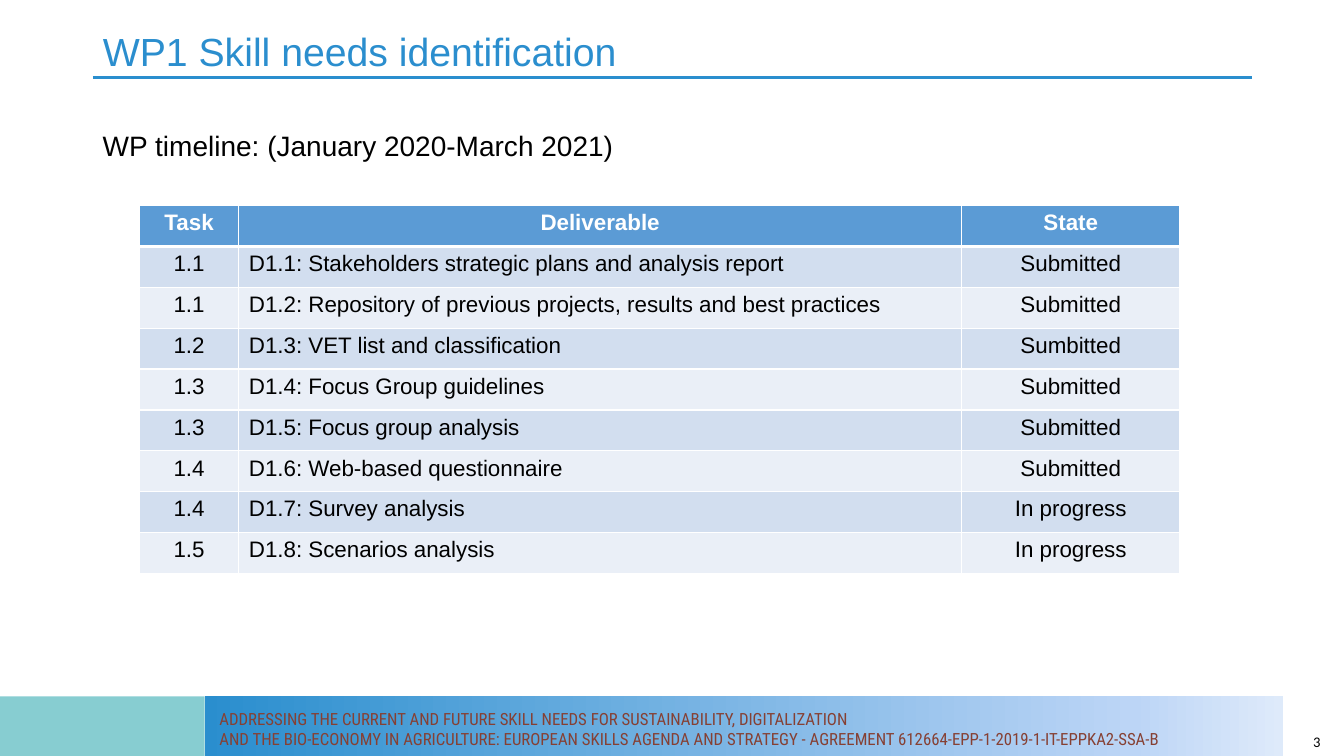
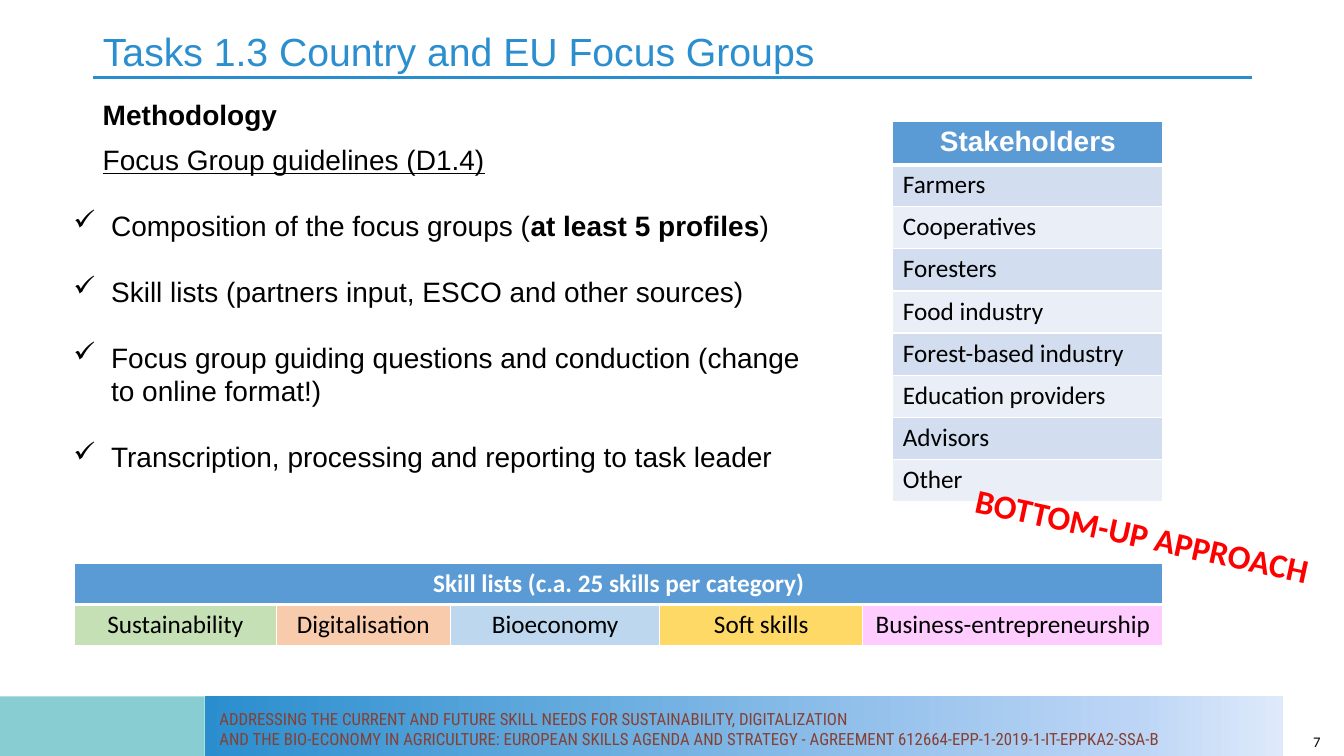
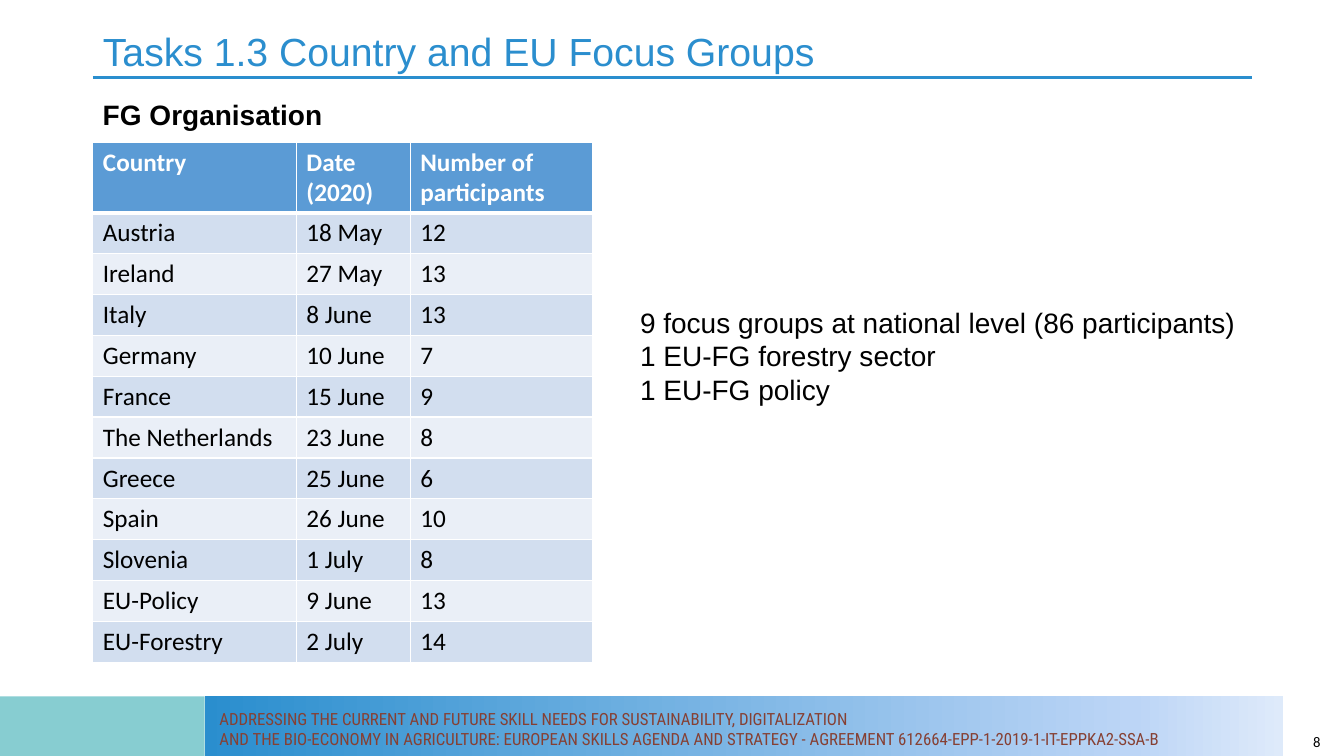
from copy import deepcopy

from lxml import etree
from pptx import Presentation
from pptx.dml.color import RGBColor
from pptx.enum.shapes import MSO_CONNECTOR, MSO_SHAPE
from pptx.enum.text import MSO_ANCHOR, MSO_AUTO_SIZE, PP_ALIGN
from pptx.oxml.ns import qn
from pptx.util import Cm, Pt

LEFT, CENTER, RIGHT, JUSTIFY = PP_ALIGN.LEFT, PP_ALIGN.CENTER, PP_ALIGN.RIGHT, PP_ALIGN.JUSTIFY
TOP, MIDDLE = MSO_ANCHOR.TOP, MSO_ANCHOR.MIDDLE
RECT, STRAIGHT = MSO_SHAPE.RECTANGLE, MSO_CONNECTOR.STRAIGHT
NO_FIT = MSO_AUTO_SIZE.NONE

BLACK, WHITE, RED = "000000", "FFFFFF", "FF0000"
TITLE_BLUE, RULE_BLUE, TEAL, BROWN = "2B8ECE", "2A8ECE", "87CDD1", "864033"
HEADER, BANDS = "5B9BD5", ("D2DEEF", "EAEFF7")
BAND_STOPS = ((0, RULE_BLUE), (0.86, "BCD5F6"), (1, "DEEAFA"))

FOOTER = (
    "ADDRESSING THE CURRENT AND FUTURE SKILL NEEDS FOR SUSTAINABILITY, DIGITALIZATION",
    "AND THE BIO-ECONOMY IN AGRICULTURE: EUROPEAN SKILLS AGENDA AND STRATEGY - "
    "AGREEMENT 612664-EPP-1-2019-1-IT-EPPKA2-SSA-B",
)
MARGIN = 2.34
CONTENT_W = 29.21


def rgb(color):
    return RGBColor.from_string(color)


def add_bullet(p, char, indent):
    pPr = p._p.get_or_add_pPr()
    pPr.set("marL", str(Cm(indent)))
    pPr.set("indent", str(-Cm(indent)))
    etree.SubElement(pPr, qn("a:buChar")).set("char", char)


def write(tf, paragraphs, font="Arial", size=20, color=BLACK, bold=False, align=LEFT,
          spacing=None, gap=0, bullet=None, indent=0.95):
    """Fill a text frame. A paragraph is a string or a list of (text, font attributes)."""
    for i, runs in enumerate(paragraphs):
        p = tf.add_paragraph() if i else tf.paragraphs[0]
        p.alignment = align
        if spacing:
            p.line_spacing = spacing
        if i and gap:
            p.space_before = Pt(gap)
        if bullet:
            add_bullet(p, bullet, indent)
        for text, extra in [(runs, {})] if isinstance(runs, str) else runs:
            r = p.add_run()
            r.text = text
            r.font.name, r.font.size, r.font.bold = font, Pt(size), bold
            r.font.color.rgb = rgb(color)
            for name, value in extra.items():
                setattr(r.font, name, value)


def set_borders(cell, **widths):
    """Draw white cell borders; widths in points by side L, R, T, B."""
    tcPr = cell._tc.get_or_add_tcPr()
    for side in "LRTB":
        ln = etree.SubElement(tcPr, qn(f"a:ln{side}"), w=str(Pt(widths.get(side, 1))))
        fill = etree.SubElement(ln, qn("a:solidFill"))
        etree.SubElement(fill, qn("a:srgbClr"), val=WHITE)


class Deck:
    def __init__(self):
        self.prs = Presentation()
        self.prs.slide_width, self.prs.slide_height = Cm(33.87), Cm(19.05)
        self.s = None

    def new_slide(self, title, number):
        self.s = self.prs.slides.add_slide(self.prs.slide_layouts[5])
        self.rule()
        self.band(0, 5.16, TEAL)
        self.band(5.16, 27.18)
        self.text(5.28, 17.73, 27.05, 1.27, FOOTER, font="Roboto Condensed", size=12, color=BROWN)
        self.text(25.91, 18.36, 7.62, 0.64, [str(number)], anchor=MIDDLE,
                  font="Calibri", size=10.5, align=RIGHT)
        self.title(title)

    def title(self, text):
        sp = self.s.shapes.title
        sp.left, sp.top, sp.width, sp.height = Cm(MARGIN), Cm(0.69), Cm(CONTENT_W), Cm(1.5)
        tf = sp.text_frame
        tf.auto_size, tf.vertical_anchor = NO_FIT, TOP
        write(tf, [text], size=28, color=TITLE_BLUE, spacing=0.9)

    def rule(self):
        line = self.s.shapes.add_connector(
            STRAIGHT, Cm(MARGIN), Cm(1.96), Cm(MARGIN + CONTENT_W), Cm(1.96))
        line.line.color.rgb = rgb(RULE_BLUE)
        line.line.width = Pt(2.25)
        etree.SubElement(line._element.spPr, qn("a:effectLst"))

    def band(self, x, w, color=None):
        """Footer band, in one colour or else in the shared gradient."""
        sp = self.s.shapes.add_shape(RECT, Cm(x), Cm(17.55), Cm(w), Cm(1.5))
        sp.shadow.inherit = False
        sp.line.fill.background()
        if color:
            sp.fill.solid()
            sp.fill.fore_color.rgb = rgb(color)
            return
        sp.fill.gradient()
        sp.fill.gradient_angle = 0
        stops = sp._element.spPr.find(qn("a:gradFill")).find(qn("a:gsLst"))
        stops.append(deepcopy(stops[0]))
        for stop, (position, stop_color) in zip(sp.fill.gradient_stops, BAND_STOPS):
            stop.position = position
            stop.color.rgb = rgb(stop_color)

    def text(self, x, y, w, h, paragraphs, anchor=TOP, wrap=True, rotation=0, **fmt):
        sp = self.s.shapes.add_textbox(Cm(x), Cm(y), Cm(w), Cm(h))
        sp.rotation = rotation
        tf = sp.text_frame
        tf.word_wrap, tf.vertical_anchor = wrap, anchor
        write(tf, paragraphs, **fmt)

    def table(self, x, y, widths, rows, row_h=1.03, header_h=None, aligns=None,
              header_align=CENTER, header_size=None, fills=None, font="Calibri", size=18):
        """Table with a header row; a short header is merged across all columns."""
        heights = [header_h or row_h] + [row_h] * (len(rows) - 1)
        table = self.s.shapes.add_table(len(rows), len(widths), Cm(x), Cm(y),
                                        Cm(sum(widths)), Cm(sum(heights))).table
        for column, w in zip(table.columns, widths):
            column.width = Cm(w)
        for row, h in zip(table.rows, heights):
            row.height = Cm(h)
        if len(rows[0]) < len(widths):
            table.cell(0, 0).merge(table.cell(0, len(widths) - 1))
        aligns = aligns or [LEFT] * len(widths)
        for i, row in enumerate(rows):
            for j in range(len(widths)):
                cell = table.cell(i, j)
                set_borders(cell, T=3 if i == 1 else 1, B=1 if i else 3)
                cell.fill.solid()
                body = fills[j] if fills else BANDS[(i + 1) % 2]
                cell.fill.fore_color.rgb = rgb(body if i else HEADER)
                if j >= len(row):
                    continue
                if i:
                    write(cell.text_frame, [row[j]], font=font, size=size, align=aligns[j])
                else:
                    write(cell.text_frame, [row[j]], font="Arial" if header_size else font,
                          size=header_size or size, color=WHITE, bold=True, align=header_align)


def timeline_slide(deck):
    deck.new_slide("WP1 Skill needs identification", 3)
    deck.text(MARGIN, 3.12, CONTENT_W, 1.12, ["WP timeline: (January 2020-March 2021)"],
              align=JUSTIFY)
    deck.table(3.51, 5.18, [2.51, 18.21, 5.51], [
        ("Task", "Deliverable", "State"),
        ("1.1", "D1.1: Stakeholders strategic plans and analysis report", "Submitted"),
        ("1.1", "D1.2: Repository of previous projects, results and best practices", "Submitted"),
        ("1.2", "D1.3: VET list and classification", "Sumbitted"),
        ("1.3", "D1.4: Focus Group guidelines", "Submitted"),
        ("1.3", "D1.5: Focus group analysis", "Submitted"),
        ("1.4", "D1.6: Web-based questionnaire", "Submitted"),
        ("1.4", "D1.7: Survey analysis", "In progress"),
        ("1.5", "D1.8: Scenarios analysis", "In progress"),
    ], aligns=[CENTER, LEFT, CENTER], font="Arial", size=16)


def methodology_slide(deck):
    deck.new_slide("Tasks 1.3 Country and EU Focus Groups", 7)
    deck.text(MARGIN, 2.44, 10.13, 2.4, [
        [("Methodology", {"bold": True})],
        [("Focus Group guidelines (D1.4)", {"underline": True})],
    ], align=JUSTIFY, spacing=0.9, gap=10)
    deck.text(1.6, 5.13, 19.02, 7.95, [
        [("Composition of the focus groups (", {}), ("at least 5 profiles", {"bold": True}),
         (")", {})],
        "Skill lists (partners input, ESCO and other sources)",
        "Focus group guiding questions and conduction (change to online format!)",
        "Transcription, processing and reporting to task leader",
    ], bullet="✓", gap=23)
    stakeholders = ("Stakeholders", "Farmers", "Cooperatives", "Foresters", "Food industry",
                    "Forest-based industry", "Education providers", "Advisors", "Other")
    deck.table(22.5, 3.05, [6.81], [(name,) for name in stakeholders], row_h=1.06,
               header_size=20)
    deck.table(1.88, 14.2, [5.08, 4.39, 5.28, 5.11, 7.57], [
        ("Skill lists (c.a. 25 skills per category)",),
        ("Sustainability", "Digitalisation", "Bioeconomy", "Soft skills",
         "Business-entrepreneurship"),
    ], aligns=[CENTER] * 5, fills=("C5E0B4", "F8CBAD", "BDD7EE", "FFD966", "FFCCFF"))
    deck.text(24.26, 12.85, 9.09, 1.27, ["BOTTOM-UP APPROACH"], wrap=False, rotation=12.2,
              font="Calibri", size=24, color=RED, bold=True)


def organisation_slide(deck):
    deck.new_slide("Tasks 1.3 Country and EU Focus Groups", 8)
    deck.text(MARGIN, 2.44, 10.13, 1.12, ["FG Organisation"], bold=True, align=JUSTIFY,
              spacing=0.9)
    deck.table(MARGIN, 3.58, [5.13, 2.87, 4.6], [
        ("Country", "Date (2020)", "Number of participants"),
        ("Austria", "18 May", "12"),
        ("Ireland", "27 May", "13"),
        ("Italy", "8 June", "13"),
        ("Germany", "10 June", "7"),
        ("France", "15 June", "9"),
        ("The Netherlands", "23 June", "8"),
        ("Greece", "25 June", "6"),
        ("Spain", "26 June", "10"),
        ("Slovenia", "1 July", "8"),
        ("EU-Policy", "9 June", "13"),
        ("EU-Forestry", "2 July", "14"),
    ], header_h=1.78, header_align=LEFT)
    deck.text(15.88, 7.57, 15.67, 2.82, [
        "9 focus groups at national level (86 participants)",
        "1 EU-FG forestry sector",
        "1 EU-FG policy",
    ])


def main():
    deck = Deck()
    timeline_slide(deck)
    methodology_slide(deck)
    organisation_slide(deck)
    deck.prs.save("out.pptx")


if __name__ == "__main__":
    main()
